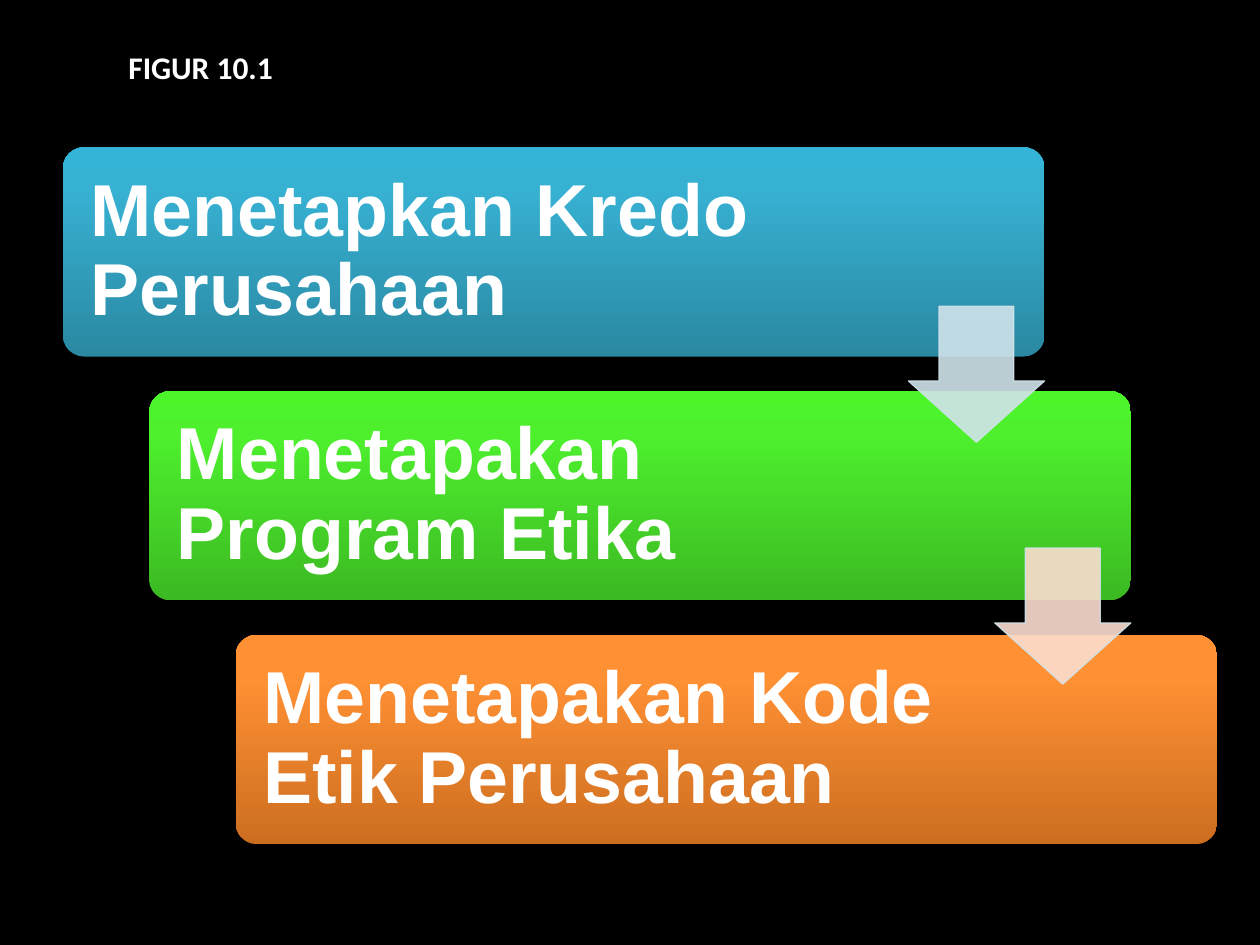
from copy import deepcopy
from typing import NamedTuple

from lxml import etree
from pptx import Presentation
from pptx.dml.color import RGBColor
from pptx.enum import shapes, text
from pptx.oxml import ns
from pptx.util import Inches, Pt

COLORS = {
    "background": "000000",
    "text": "FFFFFF",
    "arrow_line": "D0E3EA",
    "arrow_blue": "D0E3EA",
    "arrow_peach": "FCDDCF",
}
GRADIENTS = {
    "blue": ("2A88A2", "37B1D2", "34B4D6"),
    "green": ("3CB923", "4EF02E", "4CF52A"),
    "orange": ("CC6E20", "FF9034", "FF9136"),
}
STOPS = (0, 0.8, 1)
LEFT, TOP, STEP_X, STEP_Y = 0.5, 1.17, 0.685, 1.935
CARD_W, CARD_H, PAD, INSET = 7.79, 1.66, 0.05, 0.17
ARROW, ARROW_TOP, ARROW_STEP = 1.08, 2.43, 1.92


class Step(NamedTuple):
    label: str
    gradient: str
    text_width: float


STEPS = (
    Step("Menetapkan Kredo Perusahaan", "blue", 6),
    Step("Menetapakan Program Etika", "green", 5.93),
    Step("Menetapakan Kode Etik Perusahaan", "orange", 5.93),
)
ARROWS = ("arrow_blue", "arrow_peach")


def rgb(name: str) -> RGBColor:
    """Look up a named colour."""
    return RGBColor.from_string(COLORS[name])


def set_alpha(fill_element, percent: int) -> None:
    """Make a solid fill partly transparent."""
    color = fill_element.find(ns.qn("a:srgbClr"))
    etree.SubElement(color, ns.qn("a:alpha"), val=str(percent * 1000))


def set_gradient(sp, name: str) -> None:
    """Fill a shape with three stops running upwards."""
    sp.fill.gradient()
    sp.fill.gradient_angle = 90
    stops = sp._element.spPr.find(ns.qn("a:gradFill")).find(ns.qn("a:gsLst"))
    stops.append(deepcopy(stops[-1]))
    for stop, position, color in zip(sp.fill.gradient_stops, STOPS, GRADIENTS[name]):
        stop.position = position
        stop.color.rgb = RGBColor.from_string(color)


def add_label(s, label: str, x: float, y: float, w: float, h: float,
              font: str, size: float):
    """Add bold white text and return its frame."""
    tf = s.shapes.add_textbox(Inches(x), Inches(y), Inches(w), Inches(h)).text_frame
    tf.word_wrap = True
    p = tf.paragraphs[0]
    p.text = label
    p.font.name, p.font.size, p.font.bold = font, Pt(size), True
    p.font.color.rgb = rgb("text")
    return tf


def add_step(s, index: int, step: Step) -> None:
    """Draw one card of the staircase with its label."""
    x, y = LEFT + index * STEP_X, TOP + index * STEP_Y
    sp = s.shapes.add_shape(shapes.MSO_SHAPE.ROUNDED_RECTANGLE, Inches(x), Inches(y),
                            Inches(CARD_W), Inches(CARD_H))
    sp.adjustments[0] = 0.1
    sp.shadow.inherit = False
    sp.line.fill.background()
    set_gradient(sp, step.gradient)
    tf = add_label(s, step.label, x + PAD, y + PAD, step.text_width,
                   CARD_H - 2 * PAD, "Arial", 42)
    tf.vertical_anchor = text.MSO_ANCHOR.MIDDLE
    tf.margin_left = tf.margin_right = tf.margin_top = tf.margin_bottom = Inches(INSET)
    tf.paragraphs[0].line_spacing = 0.9


def add_arrow(s, index: int, color: str) -> None:
    """Draw the arrow leading from one card to the next."""
    x = LEFT + index * STEP_X + CARD_W - ARROW
    y = ARROW_TOP + index * ARROW_STEP
    sp = s.shapes.add_shape(shapes.MSO_SHAPE.DOWN_ARROW, Inches(x), Inches(y),
                            Inches(ARROW), Inches(ARROW))
    sp.adjustments[0], sp.adjustments[1] = 0.55, 0.45
    sp.shadow.inherit = False
    sp.fill.solid()
    sp.fill.fore_color.rgb = rgb(color)
    sp.line.color.rgb = rgb("arrow_line")
    sp.line.width = Pt(0.75)
    spPr = sp._element.spPr
    set_alpha(spPr.find(ns.qn("a:solidFill")), 90)
    set_alpha(spPr.find(ns.qn("a:ln")).find(ns.qn("a:solidFill")), 90)


def main() -> None:
    """Build the slide and save it."""
    prs = Presentation()
    prs.slide_width, prs.slide_height = Inches(10), Inches(7.5)
    s = prs.slides.add_slide(prs.slide_layouts[6])
    s.background.fill.solid()
    s.background.fill.fore_color.rgb = rgb("background")
    for index, step in enumerate(STEPS):
        add_step(s, index, step)
    for index, color in enumerate(ARROWS):
        add_arrow(s, index, color)
    tf = add_label(s, "FIGUR 10.1", 0.92, 0.33, 1.58, 0.4, "Calibri", 18)
    tf.auto_size = text.MSO_AUTO_SIZE.SHAPE_TO_FIT_TEXT
    prs.save("out.pptx")


if __name__ == "__main__":
    main()
